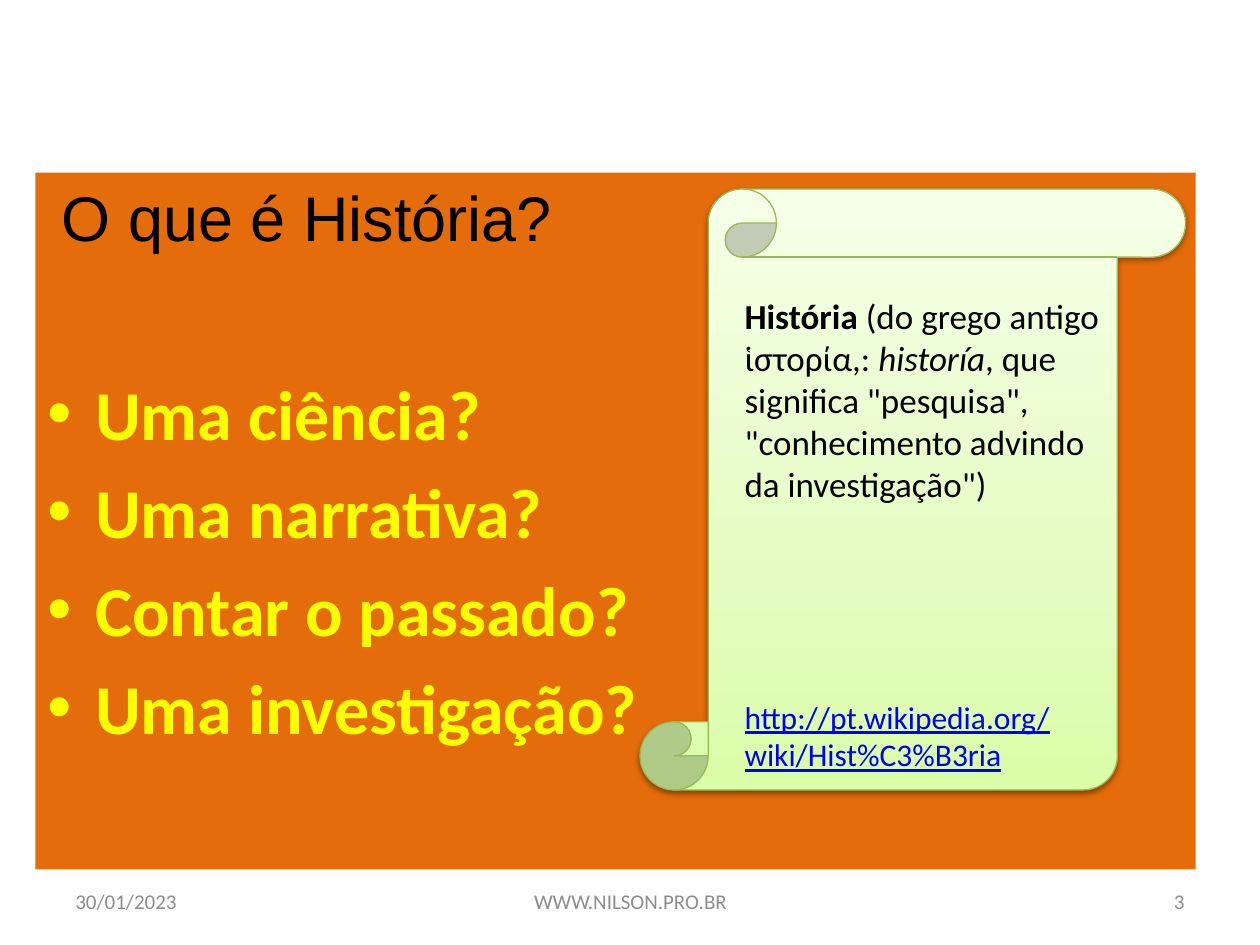
import copy

import lxml.etree
import pptx
import pptx.dml.color
import pptx.enum.shapes
import pptx.enum.text
import pptx.oxml.ns
import pptx.util
from pptx.util import Inches

COLORS = {
    "panel": "E46C0A",
    "list": "FFFF00",
    "text": "000000",
    "link": "0000FF",
    "footer": "8C8C8C",
    "scroll_line": "98B955",
}
SCROLL_STOPS = [(0, "DAFDA7"), (0.35, "E4FCC2"), (1, "F5FFE7")]
ALIGN = pptx.enum.text.PP_ALIGN
ANCHOR = pptx.enum.text.MSO_ANCHOR


def add_run(paragraph, text, size, color, name="Calibri", bold=False, italic=False):
    run = paragraph.add_run()
    run.text = text
    run.font.size = pptx.util.Pt(size)
    run.font.name = name
    run.font.bold = bold
    run.font.italic = italic
    run.font.color.rgb = pptx.dml.color.RGBColor.from_string(COLORS[color])
    return run


def set_frame(shape, anchor, top=0.05):
    frame = shape.text_frame
    frame.word_wrap = True
    frame.auto_size = pptx.enum.text.MSO_AUTO_SIZE.NONE
    frame.vertical_anchor = anchor
    frame.margin_top = Inches(top)
    return frame


presentation = pptx.Presentation()
presentation.slide_width = Inches(10)
presentation.slide_height = Inches(7.5)
slide = presentation.slides.add_slide(presentation.slide_layouts[1])
title, body = slide.shapes.title, slide.placeholders[1]

# Orange panel with the list of questions
body.left, body.top = Inches(0.28), Inches(1.37)
body.width, body.height = Inches(9.21), Inches(5.53)
body.fill.solid()
body.fill.fore_color.rgb = pptx.dml.color.RGBColor.from_string(COLORS["panel"])
frame = set_frame(body, ANCHOR.TOP, top=1.57)
questions = ["Uma ciência?", "Uma narrativa?", "Contar o passado?", "Uma investigação?"]
for index, question in enumerate(questions):
    paragraph = frame.add_paragraph() if index else frame.paragraphs[0]
    paragraph.space_before = pptx.util.Pt(8 if index else 0)
    add_run(paragraph, question, 40, "list", bold=True)

# Title, brought in front of the panel
title.left, title.top = Inches(0.39), Inches(1.42)
title.width, title.height = Inches(4.6), Inches(0.7)
paragraph = set_frame(title, ANCHOR.TOP, top=0).paragraphs[0]
paragraph.alignment = ALIGN.LEFT
add_run(paragraph, "O que é História?", 36, "text", name="Arial")
body._element.addnext(title._element)

# Scroll with gradient fill and soft shadow
scroll = slide.shapes.add_shape(
    pptx.enum.shapes.MSO_SHAPE.VERTICAL_SCROLL,
    Inches(5.08), Inches(1.5), Inches(4.33), Inches(4.77))
scroll.fill.gradient()
scroll.fill.gradient_angle = 90
properties = scroll._element.spPr
stop_list = properties.find(".//" + pptx.oxml.ns.qn("a:gsLst"))
stop_list.append(copy.deepcopy(stop_list[-1]))
for stop, (position, color) in zip(scroll.fill.gradient_stops, SCROLL_STOPS):
    stop.position = position
    stop.color.rgb = pptx.dml.color.RGBColor.from_string(color)
scroll.line.color.rgb = pptx.dml.color.RGBColor.from_string(COLORS["scroll_line"])
scroll.line.width = pptx.util.Pt(0.75)
scroll.shadow.inherit = False
shadow = lxml.etree.SubElement(
    properties.find(pptx.oxml.ns.qn("a:effectLst")), pptx.oxml.ns.qn("a:outerShdw"),
    blurRad="40000", dist="20000", dir="5400000", rotWithShape="0")
shadow_color = lxml.etree.SubElement(shadow, pptx.oxml.ns.qn("a:srgbClr"), val="000000")
lxml.etree.SubElement(shadow_color, pptx.oxml.ns.qn("a:alpha"), val="38000")

# Definition and its source
frame = set_frame(scroll, ANCHOR.TOP, top=0.3)
definition, source = frame.paragraphs[0], frame.add_paragraph()
for paragraph in (definition, source):
    paragraph.alignment = ALIGN.LEFT
    paragraph._p.get_or_add_pPr().set("marL", str(Inches(0.19)))
source.space_before = pptx.util.Pt(110)
add_run(definition, "História", 20, "text", bold=True)
add_run(definition, " (do grego antigo ἱστορία,: ", 20, "text")
add_run(definition, "historía", 20, "text", italic=True)
add_run(definition, ', que significa "pesquisa", "conhecimento advindo da investigação")',
        20, "text")
link = add_run(source, "http://pt.wikipedia.org/wiki/Hist%C3%B3ria", 18, "link")
link.font.underline = True

# Footer: date, site and slide number
for left, width, text, alignment in [
    (0.5, 2.33, "30/01/2023", ALIGN.LEFT),
    (3.42, 3.17, "WWW.NILSON.PRO.BR", ALIGN.CENTER),
    (7.17, 2.33, "3", ALIGN.RIGHT),
]:
    box = slide.shapes.add_textbox(Inches(left), Inches(6.95), Inches(width), Inches(0.4))
    paragraph = set_frame(box, ANCHOR.MIDDLE).paragraphs[0]
    paragraph.alignment = alignment
    add_run(paragraph, text, 12, "footer")

presentation.save("out.pptx")
